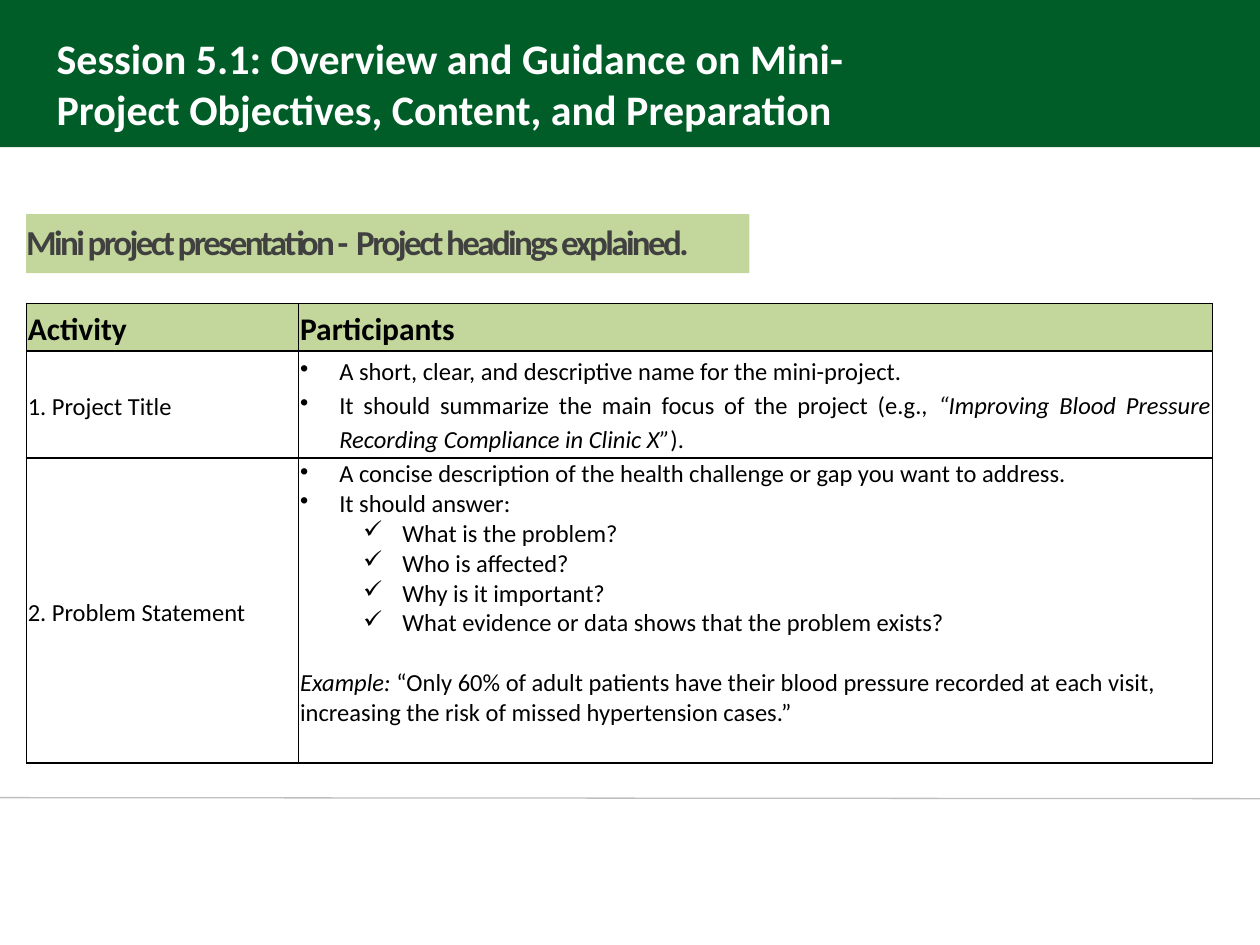
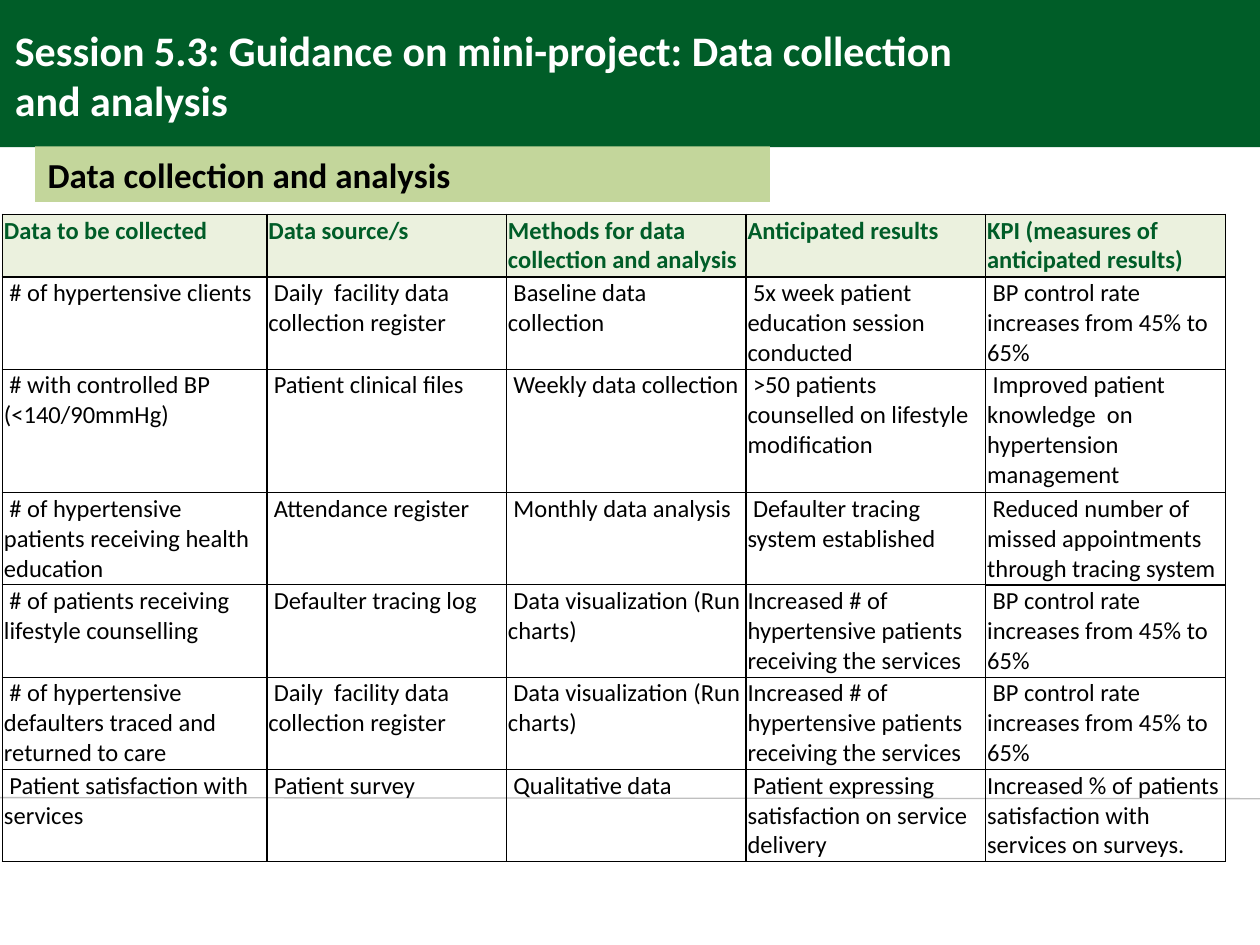
from dataclasses import dataclass

from lxml.etree import SubElement
from pptx import Presentation
from pptx.dml.color import RGBColor
from pptx.enum.shapes import MSO_CONNECTOR, MSO_SHAPE
from pptx.enum.text import MSO_ANCHOR, MSO_AUTO_SIZE, PP_ALIGN
from pptx.oxml.ns import qn
from pptx.util import Cm, Pt


@dataclass(frozen=True)
class Theme:
    green: RGBColor = RGBColor(0x00, 0x5D, 0x28)
    light_green: RGBColor = RGBColor(0xC3, 0xD6, 0x9B)
    pale_green: RGBColor = RGBColor(0xEB, 0xF1, 0xDE)
    rule: RGBColor = RGBColor(0xBF, 0xBF, 0xBF)
    dark_gray: RGBColor = RGBColor(0x40, 0x40, 0x40)
    black: RGBColor = RGBColor(0, 0, 0)
    white: RGBColor = RGBColor(255, 255, 255)
    font: str = "Calibri"
    title: Pt = Pt(24)
    heading: Pt = Pt(20)
    table_head: Pt = Pt(18)
    body: Pt = Pt(14)


@dataclass
class Para:
    """A paragraph; every second piece of its wording is italic."""
    wording: tuple
    bullet: str = ""
    indent: float = 0
    hanging: float = 0
    layout: tuple = ()


THEME = Theme()
WIDTH, HEIGHT = 25.4, 19.05
NO_TABLE_STYLE = "{2D5ABB26-0587-4C30-8999-92F81FD0307C}"
THIN, THICK = 0.5, 1
BOX_INSETS = (0.25, 0.13, 0.25, 0.13)
JUSTIFIED = (("alignment", PP_ALIGN.JUSTIFY), ("line_spacing", 1.15))
FIRST_LINE = 0.11

PROJECT_HEADINGS = [
    ("1. Project Title", [
        Para(("A short, clear, and descriptive name for the mini-project.",),
             "•", 0.79, 0.79, JUSTIFIED),
        Para(("It should summarize the main focus of the project (e.g., ",
              "“Improving Blood Pressure Recording Compliance in Clinic X”", ")."),
             "•", 0.79, 0.79, JUSTIFIED),
    ]),
    ("2. Problem Statement", [
        *(Para((text,), "•", 0.79, 0.79) for text in (
            "A concise description of the health challenge or gap you want to address.",
            "It should answer:")),
        *(Para((text,), "✓", 2.06, 0.79) for text in (
            "What is the problem?", "Who is affected?", "Why is it important?",
            "What evidence or data shows that the problem exists?")),
        Para(("", "Example:", " “Only 60% of adult patients have their blood pressure "
              "recorded at each visit, increasing the risk of missed hypertension cases.”"),
             layout=(("space_before", Pt(17)),)),
    ]),
]

REGISTER = "Daily  facility data collection register"
CHARTS = "Data visualization (Run charts)"
MORE_SERVED = "Increased # of hypertensive patients receiving the services"
BP_RATE = "BP control rate increases from 45% to 65%"
MORE_SATISFIED = "Increased % of patients satisfaction with services on surveys."
FLUSH_LEFT = {MORE_SERVED, MORE_SATISFIED}
DATA_PLAN = [
    ("Data to be collected", "Data source/s", "Methods for data collection and analysis",
     "Anticipated results", "KPI (measures of anticipated results)"),
    ("# of hypertensive clients", REGISTER, "Baseline data collection",
     "5x week patient education session conducted", BP_RATE),
    ("# with controlled BP (<140/90mmHg)", "Patient clinical files",
     "Weekly data collection", ">50 patients counselled on lifestyle modification",
     "Improved patient knowledge  on hypertension management"),
    ("# of hypertensive patients receiving health education", "Attendance register",
     "Monthly data analysis", "Defaulter tracing system established",
     "Reduced number of missed appointments through tracing system"),
    ("# of patients receiving lifestyle counselling", "Defaulter tracing log",
     CHARTS, MORE_SERVED, BP_RATE),
    ("# of hypertensive defaulters traced and returned to care", REGISTER,
     CHARTS, MORE_SERVED, BP_RATE),
    ("Patient satisfaction with services", "Patient survey", "Qualitative data",
     "Patient expressing satisfaction on service delivery", MORE_SATISFIED),
]


def set_format(obj, **values):
    for name, value in values.items():
        setattr(obj, name, value)


def set_insets(obj, insets):
    sides = ("margin_left", "margin_top", "margin_right", "margin_bottom")
    set_format(obj, **{side: Cm(inset) for side, inset in zip(sides, insets)})


def add_run(p, text, size, color, bold=False, italic=False):
    r = p.add_run()
    r.text = text
    set_format(r.font, name=THEME.font, size=size, bold=bold, italic=italic)
    r.font.color.rgb = color
    return r


def write_paras(tf, paras, size=THEME.body, color=THEME.black, bold=False):
    for i, para in enumerate(paras):
        p = tf.paragraphs[0] if i == 0 else tf.add_paragraph()
        set_format(p, **dict(para.layout))
        pPr = p._p.get_or_add_pPr()
        pPr.set("marL", str(Cm(para.indent)))
        pPr.set("indent", str(Cm(-para.hanging)))
        if para.bullet:
            SubElement(pPr, qn("a:buChar"), char=para.bullet)
        for j, text in enumerate(para.wording):
            if text:
                add_run(p, text, size, color, bold, italic=j % 2 == 1)


def add_backdrop(prs, s):
    """Put the title band and the footer rule on the slide master."""
    band = s.shapes.add_shape(MSO_SHAPE.RECTANGLE, 0, 0, Cm(WIDTH), Cm(2.97))
    band.shadow.inherit = False
    band.fill.solid()
    band.fill.fore_color.rgb = THEME.green
    band.line.fill.background()
    rule = s.shapes.add_connector(MSO_CONNECTOR.STRAIGHT, 0, Cm(16.08), Cm(WIDTH), Cm(16.1))
    rule.line.color.rgb = THEME.rule
    rule.line.width = Pt(0.75)
    SubElement(rule.element.spPr, qn("a:effectLst"))
    for i, sp in enumerate((band, rule)):
        sp.element.xpath(".//p:cNvPr")[0].set("id", str(100 + i))
        prs.slide_master.shapes.element.insert(2 + i, sp.element)


def add_title(s, text, left, top, width):
    title = s.shapes.title
    set_format(title, left=Cm(left), top=Cm(top), width=Cm(width), height=Cm(2.31))
    tf = title.text_frame
    set_format(tf, word_wrap=True, auto_size=MSO_AUTO_SIZE.NONE,
               vertical_anchor=MSO_ANCHOR.TOP)
    set_insets(tf, BOX_INSETS)
    tf.paragraphs[0].alignment = PP_ALIGN.LEFT
    add_run(tf.paragraphs[0], text, THEME.title, THEME.white, bold=True)


def add_heading(s, text, box, color=THEME.black, insets=BOX_INSETS,
                line_spacing=1.0, tracking=0):
    """Add a light green heading bar; tracking is in points."""
    sp = s.shapes.add_shape(MSO_SHAPE.RECTANGLE, *map(Cm, box))
    sp.shadow.inherit = False
    sp.fill.solid()
    sp.fill.fore_color.rgb = THEME.light_green
    sp.line.fill.background()
    tf = sp.text_frame
    set_format(tf, word_wrap=True, vertical_anchor=MSO_ANCHOR.MIDDLE)
    set_insets(tf, insets)
    p = tf.paragraphs[0]
    set_format(p, alignment=PP_ALIGN.LEFT, line_spacing=line_spacing)
    r = add_run(p, text, THEME.heading, color, bold=True)
    if tracking:
        r._r.get_or_add_rPr().set("spc", str(int(tracking * 100)))


def add_table(s, left, top, col_widths, row_heights):
    frame = s.shapes.add_table(len(row_heights), len(col_widths), Cm(left), Cm(top),
                               Cm(sum(col_widths)), Cm(sum(row_heights)))
    frame.element.xpath(".//a:tableStyleId")[0].text = NO_TABLE_STYLE
    table = frame.table
    for col, width in zip(table.columns, col_widths):
        col.width = Cm(width)
    for row, height in zip(table.rows, row_heights):
        row.height = Cm(height)
    return table


def style_cell(cell, fill=None, top=THICK, bottom=THICK,
               anchor=MSO_ANCHOR.TOP, bottom_inset=0.03):
    cell.vertical_anchor = anchor
    set_insets(cell, (0.03, 0.03, 0.03, bottom_inset))
    tcPr = cell._tc.get_or_add_tcPr()
    for side, width in zip("LRTB", (THICK, THICK, top, bottom)):
        ln = SubElement(tcPr, qn(f"a:ln{side}"), w=str(Pt(width)))
        color = SubElement(SubElement(ln, qn("a:solidFill")), qn("a:srgbClr"))
        color.set("val", str(THEME.black))
    if fill is None:
        cell.fill.background()
    else:
        cell.fill.solid()
        cell.fill.fore_color.rgb = fill


def add_project_table(s):
    table = add_table(s, 0.53, 6.12, [5.49, 18.42], [0.94, 2.16, 6.15])
    for cell, text in zip(table.rows[0].cells, ("Activity", "Participants")):
        style_cell(cell, THEME.light_green, anchor=MSO_ANCHOR.MIDDLE)
        write_paras(cell.text_frame, [Para((text,), layout=JUSTIFIED)],
                    THEME.table_head, bold=True)
    for i, (activity, details) in enumerate(PROJECT_HEADINGS, 1):
        name, detail = table.rows[i].cells
        style_cell(name, THEME.white, anchor=MSO_ANCHOR.MIDDLE)
        write_paras(name.text_frame, [Para((activity,), layout=JUSTIFIED)])
        style_cell(detail, THEME.white)
        write_paras(detail.text_frame, details)


def add_data_table(s):
    heights = [1.26, 1.86, 2.49] + [1.86] * 4
    table = add_table(s, 0.05, 4.32, [5.33] + [4.83] * 4, heights)
    last_row, last_col = len(DATA_PLAN) - 1, len(DATA_PLAN[0]) - 1
    thick_below = {(3, last_col)}

    def edge_below(i, j):
        return THICK if i in (-1, 0, last_row) or (i, j) in thick_below else THIN

    for i, row in enumerate(DATA_PLAN):
        head = i == 0
        for j, text in enumerate(row):
            cell = table.cell(i, j)
            style_cell(cell, THEME.pale_green if head else None,
                       top=edge_below(i - 1, j), bottom=edge_below(i, j), bottom_inset=0)
            flush = head or text in FLUSH_LEFT
            write_paras(cell.text_frame, [Para((text,), hanging=0 if flush else -FIRST_LINE)],
                        color=THEME.green if head else THEME.black, bold=head)


def main():
    prs = Presentation()
    set_format(prs, slide_width=Cm(WIDTH), slide_height=Cm(HEIGHT))
    title_only = prs.slide_layouts[5]

    s = prs.slides.add_slide(title_only)
    add_backdrop(prs, s)
    add_title(s, "Session 5.1: Overview and Guidance on Mini-Project Objectives, "
              "Content, and Preparation", 0.89, 0.53, 18.21)
    add_heading(s, "Mini project presentation -  Project headings explained.",
                (0.53, 4.32, 14.58, 1.19), THEME.dark_gray, (0, 0, 0, 0), 0.9, -1.5)
    add_project_table(s)

    s = prs.slides.add_slide(title_only)
    add_title(s, "Session 5.3: Guidance on mini-project: Data collection and analysis",
              0.05, 0.36, 19.41)
    add_heading(s, "Data collection and analysis", (0.71, 2.95, 14.81, 1.12))
    add_data_table(s)

    prs.save("out.pptx")


if __name__ == "__main__":
    main()
